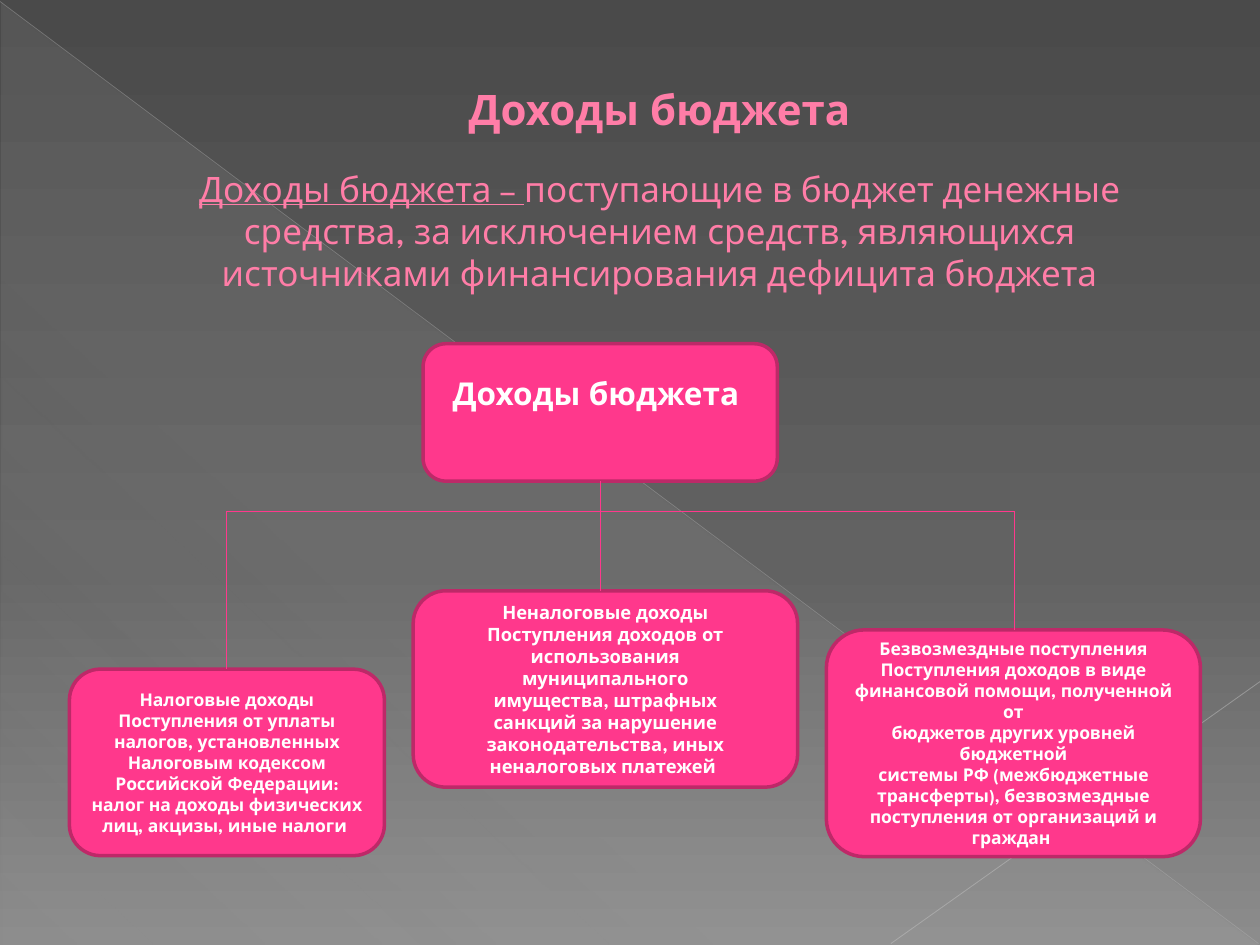
"""Build a slide with a tree diagram of budget revenues."""
from dataclasses import dataclass

from lxml import etree
from pptx import Presentation
from pptx.dml.color import RGBColor
from pptx.enum.shapes import MSO_CONNECTOR, MSO_SHAPE
from pptx.enum.text import MSO_ANCHOR, PP_ALIGN
from pptx.oxml.ns import qn
from pptx.util import Cm, Pt

STRAIGHT = MSO_CONNECTOR.STRAIGHT
ROUNDED = MSO_SHAPE.ROUNDED_RECTANGLE
TRIANGLE = MSO_SHAPE.RIGHT_TRIANGLE
CENTER = PP_ALIGN.CENTER
TOP, MIDDLE = MSO_ANCHOR.TOP, MSO_ANCHOR.MIDDLE

FONT = "League Spartan"
PINK = RGBColor(0xFF, 0x38, 0x8C)
BORDER = RGBColor(0xBD, 0x29, 0x68)
TITLE_PINK = RGBColor(0xFF, 0x7D, 0xA7)
WHITE = RGBColor(0xFF, 0xFF, 0xFF)
SILVER = RGBColor(0xD2, 0xD2, 0xD2)
RAY_DARK = RGBColor(0xBF, 0xBF, 0xBF)
RAY_LIGHT = RGBColor(0xC6, 0xC6, 0xC6)
DARK_GRAY = RGBColor(0x4A, 0x4A, 0x4A)
MID_GRAY = RGBColor(0x62, 0x62, 0x62)
LIGHT_GRAY = RGBColor(0x8C, 0x8C, 0x8C)


@dataclass
class Card:
    left: float
    top: float
    width: float
    height: float
    size: float
    lines: list[str]
    bottom_margin: float = 0.13


@dataclass
class Line:
    x1: float
    y1: float
    x2: float
    y2: float
    color: RGBColor = PINK
    width: float = 0.75
    opacity: int = 100


@dataclass
class Stop:
    position: int
    color: RGBColor
    opacity: int = 100


ROOT = Card(8.53, 6.93, 7.14, 2.77, 18, ["Доходы бюджета "], 0.9)
TAX = Card(1.4, 13.49, 6.35, 3.76, 10, [
    "Налоговые доходы", "Поступления от уплаты", "налогов, установленных",
    "Налоговым кодексом", "Российской Федерации:",
    "налог на доходы физических", "лиц, акцизы, иные налоги "])
NON_TAX = Card(8.33, 11.91, 7.75, 3.96, 10.5, [
    "Неналоговые доходы", "Поступления доходов от", "использования",
    "муниципального", "имущества, штрафных", "санкций за нарушение",
    "законодательства, иных", "неналоговых платежей "])
GRANTS = Card(16.66, 12.7, 7.54, 4.57, 10, [
    "Безвозмездные поступления", "Поступления доходов в виде",
    "финансовой помощи, полученной от",
    "бюджетов других уровней бюджетной",
    "системы РФ (межбюджетные", "трансферты), безвозмездные",
    "поступления от организаций и граждан "])

BUS, LEFT, MIDDLE_X, RIGHT = 10.31, 4.57, 12.11, 20.45
BRANCHES = [
    Line(LEFT, BUS, RIGHT, BUS),
    Line(LEFT, BUS, LEFT, TAX.top),
    Line(RIGHT, BUS, RIGHT, GRANTS.top),
    Line(MIDDLE_X, ROOT.top + ROOT.height, MIDDLE_X, NON_TAX.top),
]
RAYS = [
    Line(0, 0.03, 25.37, 19.02, RAY_DARK, 0.39, 35),
    Line(25.4, 13.74, 17.96, 19.02, RAY_LIGHT, 0.47, 45),
]


def set_opacity(color_element, percent: int) -> None:
    if percent < 100:
        etree.SubElement(color_element, qn("a:alpha")).set("val", str(percent * 1000))


def set_gradient(fill, element, angle: int, stops: list[Stop]) -> None:
    fill.gradient()
    fill.gradient_angle = angle
    stop_list = next(element.iter(qn("a:gsLst")))
    for old_stop in list(stop_list):
        stop_list.remove(old_stop)
    for stop in stops:
        entry = etree.SubElement(stop_list, qn("a:gs"))
        entry.set("pos", str(stop.position * 1000))
        color = etree.SubElement(entry, qn("a:srgbClr"))
        color.set("val", str(stop.color))
        set_opacity(color, stop.opacity)


def add_span(para, text: str, size: float, color: RGBColor,
             bold: bool = False, underline: bool = False) -> None:
    span = para.add_run()
    span.text = text
    span.font.name = FONT
    span.font.size = Pt(size)
    span.font.bold = bold
    span.font.underline = underline
    span.font.color.rgb = color


def draw_line(page, line: Line) -> None:
    connector = page.shapes.add_connector(
        STRAIGHT, Cm(line.x1), Cm(line.y1), Cm(line.x2), Cm(line.y2))
    connector.line.color.rgb = line.color
    connector.line.width = Pt(line.width)
    properties = connector._element.spPr
    set_opacity(next(properties.iter(qn("a:srgbClr"))), line.opacity)
    etree.SubElement(properties, qn("a:effectLst"))


def draw_card(page, card: Card) -> None:
    box = page.shapes.add_shape(
        ROUNDED, Cm(card.left), Cm(card.top), Cm(card.width), Cm(card.height))
    box.shadow.inherit = False
    box.fill.solid()
    box.fill.fore_color.rgb = PINK
    box.line.color.rgb = BORDER
    box.line.width = Pt(2)
    frame = box.text_frame
    frame.word_wrap = True
    frame.vertical_anchor = MIDDLE
    frame.margin_bottom = Cm(card.bottom_margin)
    para = frame.paragraphs[0]
    para.alignment = CENTER
    for index, text in enumerate(card.lines):
        if index:
            para.add_line_break()
        add_span(para, text, card.size, WHITE, bold=True)


def draw_backdrop(page) -> None:
    background = page.background
    set_gradient(background.fill, page._element, 270, [
        Stop(0, DARK_GRAY), Stop(60, MID_GRAY), Stop(100, LIGHT_GRAY)])
    triangle = page.shapes.add_shape(TRIANGLE, Cm(0.03), Cm(0.05), Cm(25.35), Cm(19))
    triangle.shadow.inherit = False
    triangle.line.fill.background()
    set_gradient(triangle.fill, triangle._element, 227, [
        Stop(0, SILVER, 10), Stop(70, SILVER, 8), Stop(100, SILVER, 1)])
    for ray in RAYS:
        draw_line(page, ray)


def draw_title(page) -> None:
    title = page.shapes.title
    page.shapes._spTree.append(title._element)
    title.left, title.top = Cm(1.19), Cm(1.19)
    title.width, title.height = Cm(22.86), Cm(6.15)
    frame = title.text_frame
    frame.word_wrap = True
    frame.vertical_anchor = TOP
    frame.margin_top = Cm(0.5)
    heading, definition = frame.paragraphs[0], frame.add_paragraph()
    for para in (heading, definition):
        para.alignment = CENTER
        para.space_before = Pt(0)
        para.line_spacing = 1.0
        para._p.get_or_add_pPr().set("marL", str(Cm(1.35)))
    heading.space_after = Pt(19)
    add_span(heading, "Доходы бюджета", 24, TITLE_PINK, bold=True)
    add_span(definition, "Доходы бюджета – ", 20, TITLE_PINK, underline=True)
    add_span(definition, "поступающие в бюджет денежные средства, за исключением "
             "средств, являющихся источниками финансирования дефицита бюджета",
             20, TITLE_PINK)


def main() -> None:
    deck = Presentation()
    deck.slide_width, deck.slide_height = Cm(25.4), Cm(19.05)
    page = deck.slides.add_slide(deck.slide_layouts[5])
    draw_backdrop(page)
    draw_title(page)
    for card in (ROOT, TAX, NON_TAX, GRANTS):
        draw_card(page, card)
    for branch in BRANCHES:
        draw_line(page, branch)
    deck.save("out.pptx")


if __name__ == "__main__":
    main()
